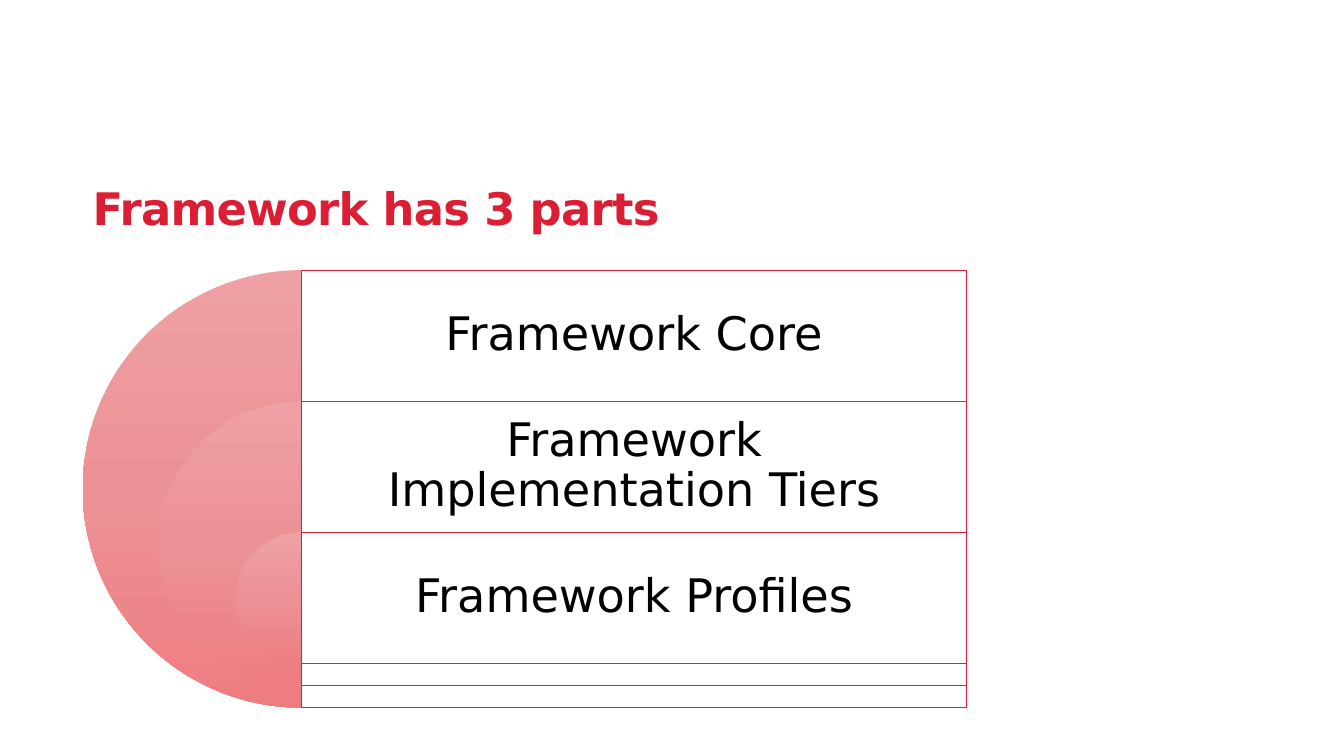
from dataclasses import dataclass

from lxml.etree import SubElement
from pptx import Presentation
from pptx.dml.color import RGBColor
from pptx.enum.shapes import MSO_SHAPE
from pptx.enum.text import MSO_ANCHOR, PP_ALIGN
from pptx.oxml import parse_xml
from pptx.oxml.ns import nsdecls, qn
from pptx.util import Inches, Pt


@dataclass(frozen=True)
class Theme:
    font: str = "DejaVu Sans"
    title_size: float = 32
    part_size: float = 33
    title_color: str = "DC1E34"
    border_color: str = "DC1E36"
    text_color: str = "000000"
    panel_color: str = "FFFFFF"
    pie_stops: tuple = ((0, "EFA0A4"), (50, "EC9296"), (100, "EE7D82"))


THEME = Theme()
PARTS = ["Framework Core", "Framework Implementation Tiers", "Framework Profiles"]
PANEL_LEFT = 2.99
PANEL_WIDTH = 6.6
PANELS_TOP = 2.68
ROW_HEIGHT = 1.3
TAIL_HEIGHT = 0.22


def add_text(slide, words, left, top, width, height, size, color, inset=None):
    label = slide.shapes.add_textbox(
        Inches(left), Inches(top), Inches(width), Inches(height))
    frame = label.text_frame
    frame.word_wrap = True
    frame.vertical_anchor = MSO_ANCHOR.MIDDLE
    if inset is not None:
        frame.margin_left = frame.margin_right = Inches(inset)
        frame.margin_top = frame.margin_bottom = Inches(inset)
    paragraph = frame.paragraphs[0]
    paragraph.text = words
    paragraph.line_spacing = 0.9
    paragraph.font.name = THEME.font
    paragraph.font.size = Pt(size)
    paragraph.font.color.rgb = RGBColor.from_string(color)
    return paragraph


def add_title(slide, words):
    title = add_text(slide, words, 0.82, 1.51, 10.41, 1.17,
                     THEME.title_size, THEME.title_color)
    title.font.bold = True
    title.runs[0]._r.get_or_add_rPr().set("spc", "-50")


def add_half_disc(slide, top, diameter):
    disc = slide.shapes.add_shape(
        MSO_SHAPE.PIE, Inches(PANEL_LEFT - diameter / 2), Inches(top),
        Inches(diameter), Inches(diameter))
    disc.adjustments[0] = 54
    disc.adjustments[1] = 162
    disc.shadow.inherit = False
    disc.line.fill.background()
    stops = "".join(
        f'<a:gs pos="{percent * 1000}"><a:srgbClr val="{color}"/></a:gs>'
        for percent, color in THEME.pie_stops)
    gradient = parse_xml(
        f'<a:gradFill {nsdecls("a")} rotWithShape="1"><a:gsLst>{stops}</a:gsLst>'
        '<a:lin ang="5400000" scaled="0"/></a:gradFill>')
    disc._element.spPr.find(qn("a:prstGeom")).addnext(gradient)


def add_panel(slide, top, height):
    panel = slide.shapes.add_shape(
        MSO_SHAPE.RECTANGLE, Inches(PANEL_LEFT), Inches(top),
        Inches(PANEL_WIDTH), Inches(height))
    panel.shadow.inherit = False
    panel.fill.solid()
    panel.fill.fore_color.rgb = RGBColor.from_string(THEME.panel_color)
    fill_color = panel._element.spPr.find(qn("a:solidFill")).find(qn("a:srgbClr"))
    SubElement(fill_color, qn("a:alpha"), val="90000")
    panel.line.color.rgb = RGBColor.from_string(THEME.border_color)
    panel.line.width = Pt(0.5)


def add_part(slide, index, words):
    top = PANELS_TOP + index * ROW_HEIGHT
    rows_below = len(PARTS) - 1 - index
    height = ROW_HEIGHT + rows_below * (ROW_HEIGHT + TAIL_HEIGHT)
    add_half_disc(slide, top, height)
    add_panel(slide, top, height)
    part = add_text(slide, words, PANEL_LEFT, top, PANEL_WIDTH, ROW_HEIGHT,
                    THEME.part_size, THEME.text_color, inset=0.14)
    part.alignment = PP_ALIGN.CENTER


def main():
    presentation = Presentation()
    presentation.slide_width = Inches(13.33)
    presentation.slide_height = Inches(7.5)
    slide = presentation.slides.add_slide(presentation.slide_layouts[6])
    add_title(slide, "Framework has 3 parts")
    for index, words in enumerate(PARTS):
        add_part(slide, index, words)
    presentation.save("out.pptx")


if __name__ == "__main__":
    main()
